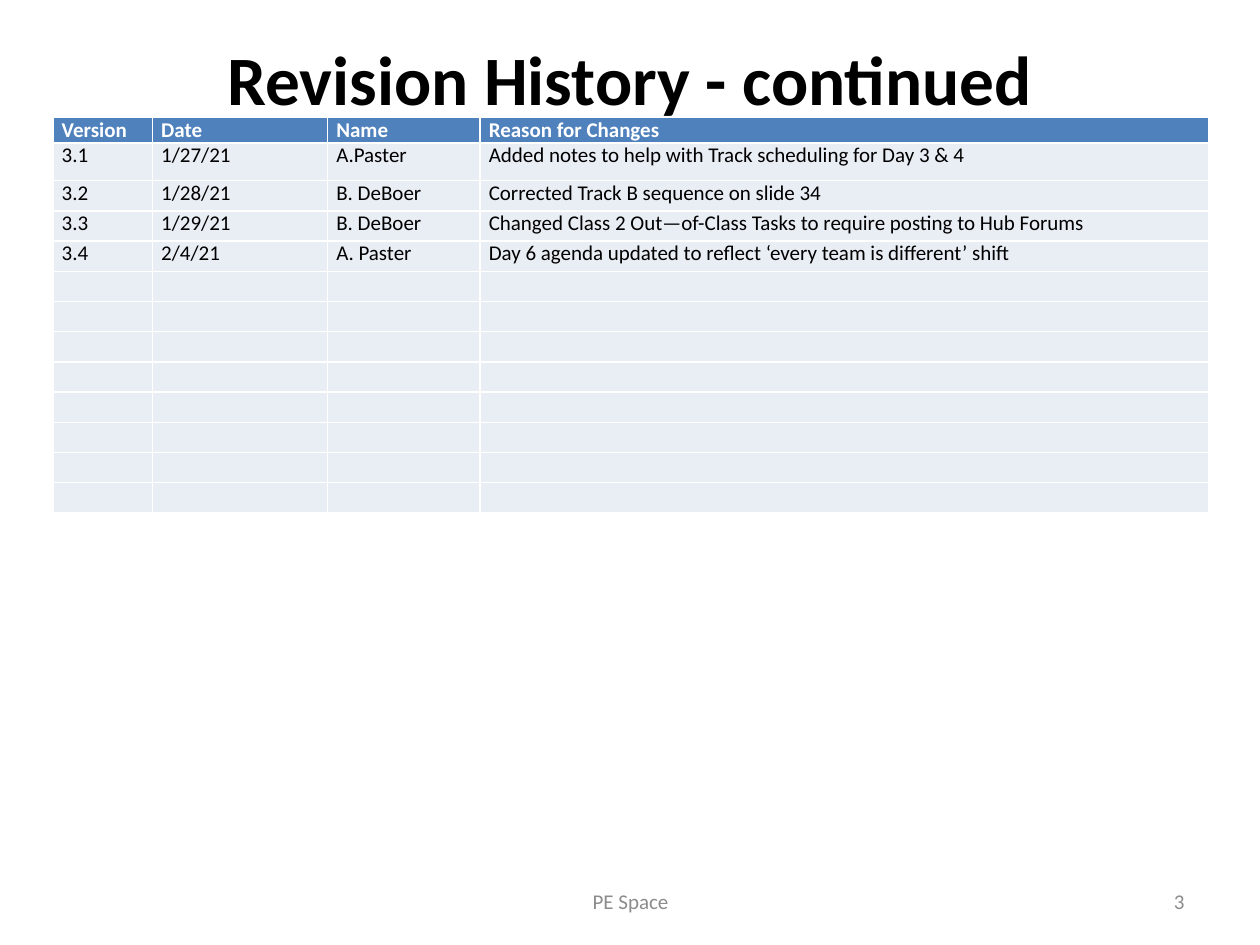
from lxml import etree
from pptx import Presentation
from pptx.dml.color import RGBColor
from pptx.enum.text import MSO_ANCHOR, PP_ALIGN
from pptx.oxml.ns import qn
from pptx.util import Inches, Pt

COLORS = {"header": "4F81BD", "body": "E9EDF4", "white": "FFFFFF",
          "black": "000000", "grey": "8C8C8C"}
FONT = "Calibri"
COL_WIDTHS = [0.79, 1.39, 1.21, 5.78]
ROW_HEIGHTS = [0.19, 0.3] + [0.24] * 11
HEADINGS = ["Version", "Date", "Name", "Reason for Changes"]
REVISIONS = [
    ["3.1", "1/27/21", "A.Paster",
     "Added notes to help with Track scheduling for Day 3 & 4"],
    ["3.2", "1/28/21", "B. DeBoer", "Corrected Track B sequence on slide 34"],
    ["3.3", "1/29/21", "B. DeBoer",
     "Changed Class 2 Out—of-Class Tasks to require posting to Hub Forums"],
    ["3.4", "2/4/21", "A. Paster",
     "Day 6 agenda updated to reflect ‘every team is different’ shift"],
]


def rgb(name):
    return RGBColor.from_string(COLORS[name])


def style(p, size, color, bold=False, align=None):
    p.alignment = align
    p.font.name = FONT
    p.font.size = Pt(size)
    p.font.bold = bold
    p.font.color.rgb = rgb(color)


def place_title(s, left, top, width, height):
    sp = s.shapes.title
    sp.left, sp.top, sp.width, sp.height = map(Inches, (left, top, width, height))
    tf = sp.text_frame
    tf.text = "Revision History - continued"
    tf.vertical_anchor = MSO_ANCHOR.MIDDLE
    tf.margin_bottom = Inches(0.66)
    style(tf.paragraphs[0], 39.6, "black", True, PP_ALIGN.CENTER)


def fill_cell(cell, value, is_header):
    cell.margin_left = cell.margin_right = Inches(0.07)
    cell.margin_top = cell.margin_bottom = 0
    cell.fill.solid()
    cell.fill.fore_color.rgb = rgb("header" if is_header else "body")
    p = cell.text_frame.paragraphs[0]
    if value:
        p.text = value
        style(p, 12, "white" if is_header else "black", is_header)
    else:
        etree.SubElement(p._p, qn("a:endParaRPr"), sz="1200")


def place_revisions(s, left, top, width, height):
    table = s.shapes.add_table(len(ROW_HEIGHTS), len(COL_WIDTHS), Inches(left),
                               Inches(top), Inches(width), Inches(height)).table
    table.horz_banding = False
    for col, w in zip(table.columns, COL_WIDTHS):
        col.width = Inches(w)
    blank_rows = len(ROW_HEIGHTS) - len(REVISIONS) - 1
    records = [HEADINGS] + REVISIONS + [[""] * len(HEADINGS)] * blank_rows
    for i, (row, h, record) in enumerate(zip(table.rows, ROW_HEIGHTS, records)):
        row.height = Inches(h)
        for cell, value in zip(row.cells, record):
            fill_cell(cell, value, i == 0)


def place_footer(s, left, top, width, height, value, align):
    box = s.shapes.add_textbox(*map(Inches, (left, top, width, height)))
    tf = box.text_frame
    tf.word_wrap = True
    tf.vertical_anchor = MSO_ANCHOR.MIDDLE
    tf.text = value
    style(tf.paragraphs[0], 12, "grey", align=align)


def main():
    prs = Presentation()
    prs.slide_width, prs.slide_height = Inches(10), Inches(7.5)
    s = prs.slides.add_slide(prs.slide_layouts[5])
    place_title(s, 0.5, 0.3, 9, 1.25)
    place_revisions(s, 0.42, 0.93, sum(COL_WIDTHS), sum(ROW_HEIGHTS))
    place_footer(s, 3.42, 6.95, 3.17, 0.4, "PE Space", PP_ALIGN.CENTER)
    place_footer(s, 7.17, 6.95, 2.33, 0.4, "3", PP_ALIGN.RIGHT)
    prs.save("out.pptx")


if __name__ == "__main__":
    main()
